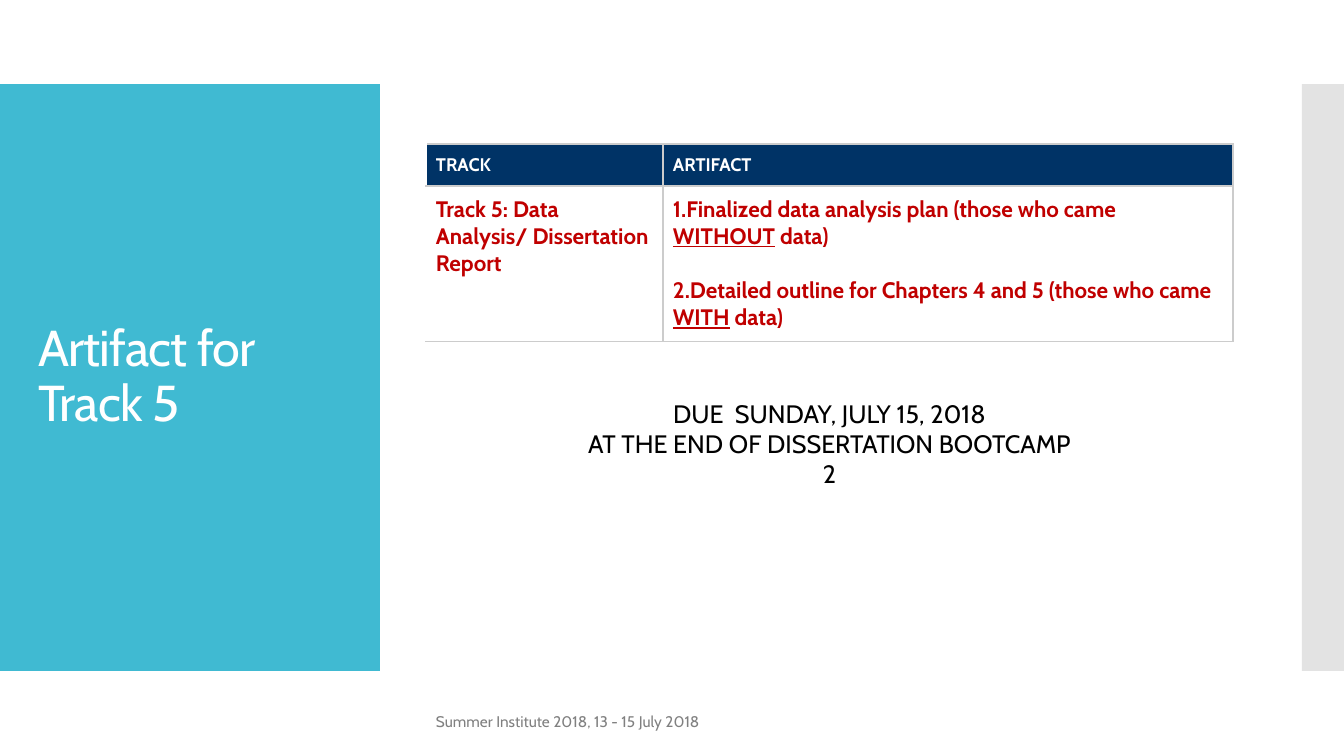
from lxml import etree
from pptx import Presentation
from pptx.dml.color import RGBColor
from pptx.enum.shapes import MSO_SHAPE
from pptx.enum.text import MSO_ANCHOR, PP_ALIGN
from pptx.oxml.ns import qn
from pptx.util import Emu, Pt

RECTANGLE = MSO_SHAPE.RECTANGLE
TOP, MIDDLE = MSO_ANCHOR.TOP, MSO_ANCHOR.MIDDLE
LEFT, CENTER = PP_ALIGN.LEFT, PP_ALIGN.CENTER
EMU_PER_PX = 914400 / 100.8
FONT = "Cabin"
TEAL, NAVY, RED, GRAY = "40BAD2", "003366", "C00000", "808080"
WHITE, BLACK, BORDER, STRIP = "FFFFFF", "000000", "CCCCCC", "E3E3E3"


def px(length):
    return Emu(round(length * EMU_PER_PX))


def rgb(value):
    return RGBColor.from_string(value)


def style(paragraph, size, color, bold=False, align=LEFT):
    font = paragraph.font
    font.name, font.size, font.bold = FONT, Pt(size), bold
    font.color.rgb = rgb(color)
    paragraph.alignment = align


def add_panel(slide, box, color):
    """Place a plain rectangle behind the title."""
    panel = slide.shapes.add_shape(RECTANGLE, *map(px, box))
    panel.shadow.inherit = False
    panel.fill.solid()
    panel.fill.fore_color.rgb = rgb(color)
    panel.line.fill.background()
    slide.shapes.title.element.addprevious(panel.element)


def place_title(slide, box, text):
    title = slide.shapes.title
    title.left, title.top, title.width, title.height = map(px, box)
    title.text_frame.text = text
    title.text_frame.word_wrap = True
    title.text_frame.vertical_anchor = MIDDLE
    paragraph = title.text_frame.paragraphs[0]
    style(paragraph, 36, WHITE)
    paragraph.line_spacing = 0.9
    paragraph.runs[0].font._element.set("spc", "-60")


def add_text(slide, box, lines, size, color, align=LEFT, anchor=TOP):
    frame = slide.shapes.add_textbox(*map(px, box)).text_frame
    frame.word_wrap = True
    frame.vertical_anchor = anchor
    frame.text = "\n".join(lines)
    for paragraph in frame.paragraphs:
        style(paragraph, size, color, align=align)


def set_borders(cell, sides):
    properties = cell._tc.get_or_add_tcPr()
    for index, side in enumerate(sides):
        line = etree.Element(qn(f"a:ln{side}"), w="12700")
        fill = etree.SubElement(line, qn("a:solidFill"))
        etree.SubElement(fill, qn("a:srgbClr"), val=BORDER)
        properties.insert(index, line)


def number(paragraph):
    """Number the paragraph with no space after the figure."""
    properties = paragraph._p.get_or_add_pPr()
    properties.set("marL", "0")
    properties.set("indent", "0")
    etree.SubElement(properties, qn("a:buFont"), typeface=FONT)
    etree.SubElement(properties, qn("a:buAutoNum"), type="arabicPeriod")


def fill_artifacts(frame, artifacts):
    for index, (before, stressed, after) in enumerate(artifacts):
        paragraph = frame.add_paragraph() if index else frame.paragraphs[0]
        for text in (before, stressed, after):
            run = paragraph.add_run()
            run.text = text
            if text == stressed:
                run.font.underline = True
        if index:
            paragraph.space_before = Pt(19.3)
        number(paragraph)


def add_track_table(slide, box, headings, track, artifacts):
    table = slide.shapes.add_table(2, 2, *map(px, box)).table
    table.first_row = table.horz_banding = False
    track_width, heading_height = 237, 41
    table.columns[0].width = px(track_width)
    table.columns[1].width = px(box[2] - track_width)
    table.rows[0].height = px(heading_height)
    table.rows[1].height = px(box[3] - heading_height)

    for column, heading in enumerate(headings):
        table.cell(0, column).text = heading
    table.cell(1, 0).text = track
    fill_artifacts(table.cell(1, 1).text_frame, artifacts)

    looks = ((NAVY, 13, WHITE), (WHITE, 16, RED))
    for row, (background, size, color) in enumerate(looks):
        for column, (sides, anchor) in enumerate((("RTB", TOP), ("LRTB", MIDDLE))):
            cell = table.cell(row, column)
            cell.fill.solid()
            cell.fill.fore_color.rgb = rgb(background)
            cell.margin_left = cell.margin_right = px(10)
            cell.margin_top = cell.margin_bottom = px(10)
            cell.vertical_anchor = anchor
            set_borders(cell, sides)
            for paragraph in cell.text_frame.paragraphs:
                style(paragraph, size, color, bold=True)


def build_artifact_slide(presentation):
    slide = presentation.slides.add_slide(presentation.slide_layouts[5])
    add_panel(slide, (0, 84, 380, 587), TEAL)
    add_panel(slide, (1302, 84, 42, 587), STRIP)
    place_title(slide, (28, 124, 325, 507), "Artifact for Track 5")
    add_track_table(
        slide, (426, 144, 807, 196), ("TRACK", "ARTIFACT"),
        "Track 5: Data Analysis/ Dissertation Report",
        (("Finalized data analysis plan (those who came ", "WITHOUT", " data)"),
         ("Detailed outline for Chapters 4 and 5 (those who came ", "WITH", " data)")),
    )
    add_text(slide, (426, 701, 651, 40),
             ["Summer Institute 2018, 13 - 15 July 2018"], 11, GRAY, anchor=MIDDLE)
    add_text(slide, (572, 393, 515, 102),
             ["DUE  SUNDAY, JULY 15, 2018", "AT THE END OF DISSERTATION BOOTCAMP\v2"],
             18, BLACK, align=CENTER)


def main():
    presentation = Presentation()
    presentation.slide_width, presentation.slide_height = px(1344), px(756)
    build_artifact_slide(presentation)
    presentation.save("out.pptx")


if __name__ == "__main__":
    main()
